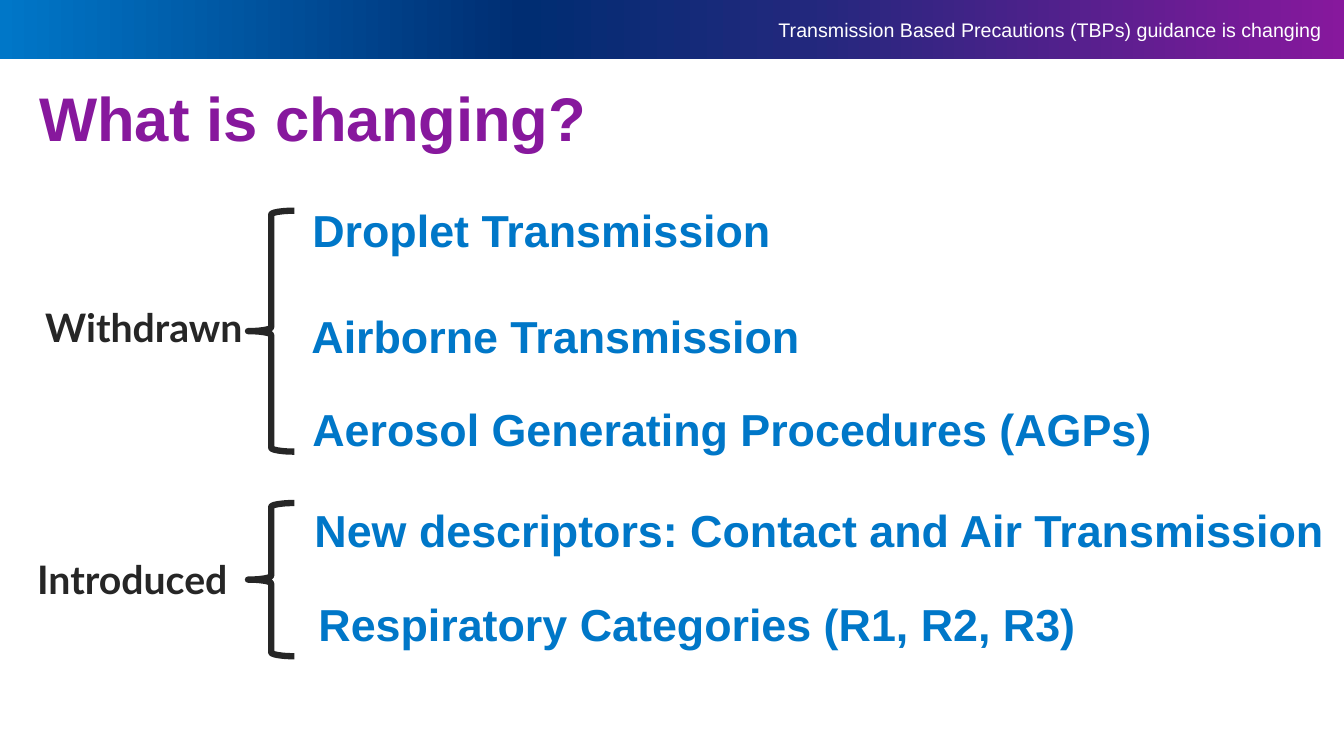
from dataclasses import dataclass

from lxml.etree import SubElement
from pptx import Presentation
from pptx.dml.color import RGBColor
from pptx.enum.shapes import MSO_SHAPE
from pptx.enum.text import MSO_ANCHOR, PP_ALIGN
from pptx.oxml.ns import qn
from pptx.util import Inches, Pt

BLUE, PURPLE, DARK, WHITE = "0077C8", "87189D", "262626", "FFFFFF"
BAND_STOPS = [(0, BLUE), (39, "002D72"), (60, "22287D"), (100, PURPLE)]


@dataclass
class Label:
    text: str
    left: float
    top: float
    width: float
    height: float = 0.64
    size: int = 32
    color: str = BLUE
    font: str = "Arial"
    bold: bool = True
    align: PP_ALIGN = PP_ALIGN.LEFT
    line_spacing: float = 1.0


@dataclass
class Brace:
    top: float
    height: float
    left: float = 2.46
    width: float = 0.46


HEADER = Label("Transmission Based Precautions (TBPs) guidance is changing",
               0.55, 0.13, 12.66, 0.34, 14, WHITE, bold=False, align=PP_ALIGN.RIGHT)
TITLE = Label("What is changing?", 0.29, 0.83, 11.5, 0.98, 44, PURPLE, line_spacing=0.9)
CHANGES = [
    Label("Droplet Transmission", 3, 1.96, 7.77),
    Label("Airborne Transmission", 2.99, 3.01, 8.08),
    Label("Aerosol Generating Procedures (AGPs)", 3, 3.94, 9.2),
    Label("New descriptors: Contact and Air Transmission", 3.02, 4.94, 10.32),
    Label("Respiratory Categories (R1, R2, R3)", 3.06, 5.87, 7.94),
]
GROUPS = [
    Label("Withdrawn", 0.35, 2.96, 2.53, 0.57, 28, DARK, "Lato"),
    Label("Introduced", 0.27, 5.46, 2.32, 0.57, 28, DARK, "Lato"),
]
BRACES = [Brace(2.09, 2.39), Brace(4.99, 1.52)]


def rgb(color: str) -> RGBColor:
    return RGBColor.from_string(color)


def add_band(page) -> None:
    band = page.shapes.add_shape(MSO_SHAPE.RECTANGLE, 0, 0, Inches(13.33), Inches(0.59))
    band.shadow.inherit = False
    band.line.fill.background()
    band.fill.gradient()
    band.fill.gradient_angle = 0
    stop_list = band.element.spPr.find(".//" + qn("a:gsLst"))
    stop_list.clear()
    for percent, color in BAND_STOPS:
        stop = SubElement(stop_list, qn("a:gs"), pos=str(percent * 1000))
        SubElement(stop, qn("a:srgbClr"), val=color)


def add_label(page, label: Label) -> None:
    box = page.shapes.add_textbox(Inches(label.left), Inches(label.top),
                                  Inches(label.width), Inches(label.height))
    frame = box.text_frame
    frame.word_wrap = True
    frame.vertical_anchor = MSO_ANCHOR.TOP
    para = frame.paragraphs[0]
    para.text = label.text
    para.alignment = label.align
    para.line_spacing = label.line_spacing
    para.font.name = label.font
    para.font.size = Pt(label.size)
    para.font.bold = label.bold
    para.font.color.rgb = rgb(label.color)


def add_brace(page, brace: Brace) -> None:
    shape = page.shapes.add_shape(MSO_SHAPE.LEFT_BRACE, Inches(brace.left), Inches(brace.top),
                                  Inches(brace.width), Inches(brace.height))
    shape.shadow.inherit = False
    shape.fill.background()
    shape.line.color.rgb = rgb(DARK)
    shape.line.width = Pt(4.5)


def main() -> None:
    deck = Presentation()
    deck.slide_width, deck.slide_height = Inches(13.33), Inches(7.5)
    page = deck.slides.add_slide(deck.slide_layouts[6])

    # Header band and all wording
    add_band(page)
    for label in [HEADER, TITLE, *CHANGES, *GROUPS]:
        add_label(page, label)

    # Braces joining each group to its changes
    for brace in BRACES:
        add_brace(page, brace)

    deck.save("out.pptx")


if __name__ == "__main__":
    main()
